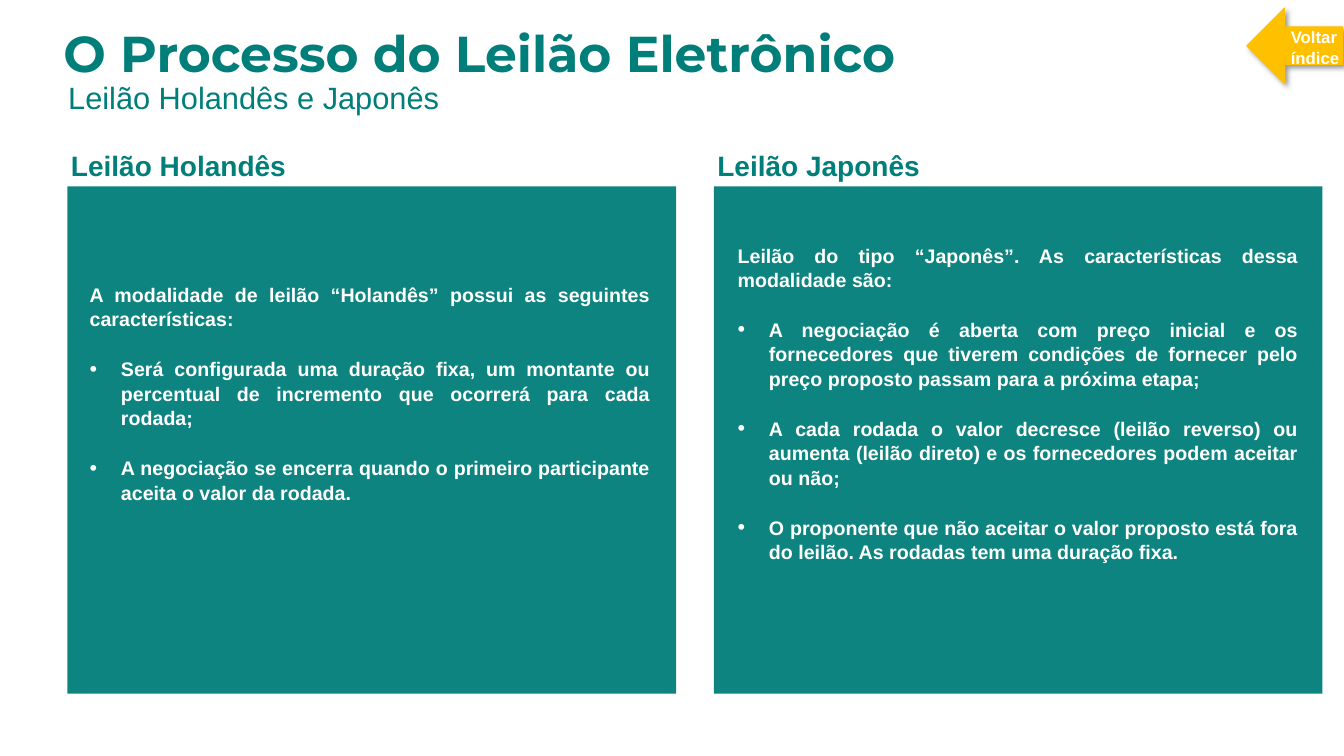
from lxml import etree
from pptx import Presentation
from pptx import util as u
from pptx.dml import color
from pptx.enum import shapes, text
from pptx.oxml import ns

COLORS = {"teal": "007E7A", "white": "FFFFFF", "amber": "FFC000", "black": "000000"}
PANEL_WIDTH, PANEL_HEIGHT = 15.34, 12.78
DUTCH = [
    "A modalidade de leilão “Holandês” possui as seguintes características:",
    "Será configurada uma duração fixa, um montante ou percentual de incremento que ocorrerá "
    "para cada rodada;",
    "A negociação se encerra quando o primeiro participante aceita o valor da rodada.",
]
JAPANESE = [
    "Leilão do tipo “Japonês”. As características dessa modalidade são:",
    "A negociação é aberta com preço inicial e os fornecedores que tiverem condições de "
    "fornecer pelo preço proposto passam para a próxima etapa;",
    "A cada rodada o valor decresce (leilão reverso) ou aumenta (leilão direto) e os "
    "fornecedores podem aceitar ou não;",
    "O proponente que não aceitar o valor proposto está fora do leilão. "
    "As rodadas tem uma duração fixa.",
]


def rgb(name):
    """Return the named colour."""
    return color.RGBColor.from_string(COLORS[name])


def add_child(parent, tag, **attributes):
    """Append a drawing element with the given attributes."""
    child = etree.SubElement(parent, ns.qn(tag))
    for key, value in attributes.items():
        child.set(key, str(value))
    return child


def add_filled(slide, preset, box, fill):
    """Add a preset shape with a plain fill, no line and no shadow."""
    shape = slide.shapes.add_shape(preset, *map(u.Cm, box))
    shape.shadow.inherit = False
    shape.fill.solid()
    shape.fill.fore_color.rgb = rgb(fill)
    shape.line.fill.background()
    return shape


def add_words(slide, box, lines, size, ink="teal", font="Arial", bold=True,
              anchor=text.MSO_ANCHOR.TOP, inset=True):
    """Add a wrapped text box with one paragraph per line and return its paragraphs."""
    frame = slide.shapes.add_textbox(*map(u.Cm, box)).text_frame
    frame.word_wrap = True
    frame.vertical_anchor = anchor
    if not inset:
        frame.margin_left = frame.margin_right = frame.margin_top = frame.margin_bottom = 0
    frame.text = "\n".join(lines)
    for paragraph in frame.paragraphs:
        for run in paragraph.runs:
            run.font.name, run.font.size, run.font.bold = font, u.Pt(size), bold
            run.font.color.rgb = rgb(ink)
    return frame.paragraphs


def add_header(slide, left, top, width):
    """Place the slide title and its subtitle."""
    add_words(slide, (left, top, width, 2), ["O Processo do Leilão Eletrônico"], 36,
              font="Montserrat", anchor=text.MSO_ANCHOR.MIDDLE, inset=False)
    add_words(slide, (left - 0.13, top + 1.52, width, 1.19), ["Leilão Holandês e Japonês"], 22,
              bold=False)


def add_auction(slide, left, top, heading, body, body_box):
    """Place an auction heading above its panel of justified text."""
    add_words(slide, (left + 0.09, top - 1.09, PANEL_WIDTH, 0.97), [heading], 20,
              anchor=text.MSO_ANCHOR.BOTTOM, inset=False)
    panel = add_filled(slide, shapes.MSO_SHAPE.RECTANGLE,
                       (left, top, PANEL_WIDTH, PANEL_HEIGHT), "teal")
    panel_color = panel._element.spPr.find(ns.qn("a:solidFill"))[0]
    add_child(panel_color, "a:alpha", val=95000)
    dx, dy, height = body_box
    paragraphs = add_words(slide, (left + dx, top + dy, 14.63, height), body, 14, ink="white",
                           anchor=text.MSO_ANCHOR.MIDDLE)
    for paragraph in paragraphs:
        paragraph.alignment = text.PP_ALIGN.JUSTIFY
        paragraph.line_spacing = 1.04
    for paragraph in paragraphs[1:]:
        paragraph.space_before = u.Pt(18.2)
        properties = paragraph._p.get_or_add_pPr()
        properties.set("marL", str(u.Cm(0.79)))
        properties.set("indent", str(-u.Cm(0.79)))
        add_child(properties, "a:buSzPct", val=110000)
        add_child(properties, "a:buFont", typeface="Arial")
        add_child(properties, "a:buChar", char="•")


def add_index_arrow(slide, left, top):
    """Place the arrow that leads back to the index."""
    arrow = add_filled(slide, shapes.MSO_SHAPE.LEFT_ARROW, (left, top, 2.41, 1.91), "amber")
    arrow.line.color.rgb = rgb("amber")
    arrow.line.width = u.Pt(0.75)
    effects = arrow._element.spPr.find(ns.qn("a:effectLst"))
    shadow = add_child(effects, "a:outerShdw", blurRad=u.Pt(4), dist=u.Pt(3), dir=2700000,
                       algn="tl", rotWithShape=0)
    shade = add_child(shadow, "a:srgbClr", val=COLORS["black"])
    add_child(shade, "a:alpha", val=40000)
    add_words(slide, (left + 0.86, top + 0.36, 1.75, 1.27), ["Voltar índice"], 12, ink="white")


def main():
    """Build the slide and save it."""
    deck = Presentation()
    deck.slide_width, deck.slide_height = u.Cm(33.87), u.Cm(19.05)
    slide = deck.slides.add_slide(deck.slide_layouts[6])
    add_header(slide, 1.6, 0.33, 30.63)
    add_auction(slide, 1.7, 4.7, "Leilão Holandês", DUTCH, (0.31, 0.33, 9.75))
    add_auction(slide, 17.99, 4.7, "Leilão Japonês", JAPANESE, (0.35, 0.25, 10.41))
    add_index_arrow(slide, 31.42, 0.2)
    deck.save("out.pptx")


if __name__ == "__main__":
    main()
